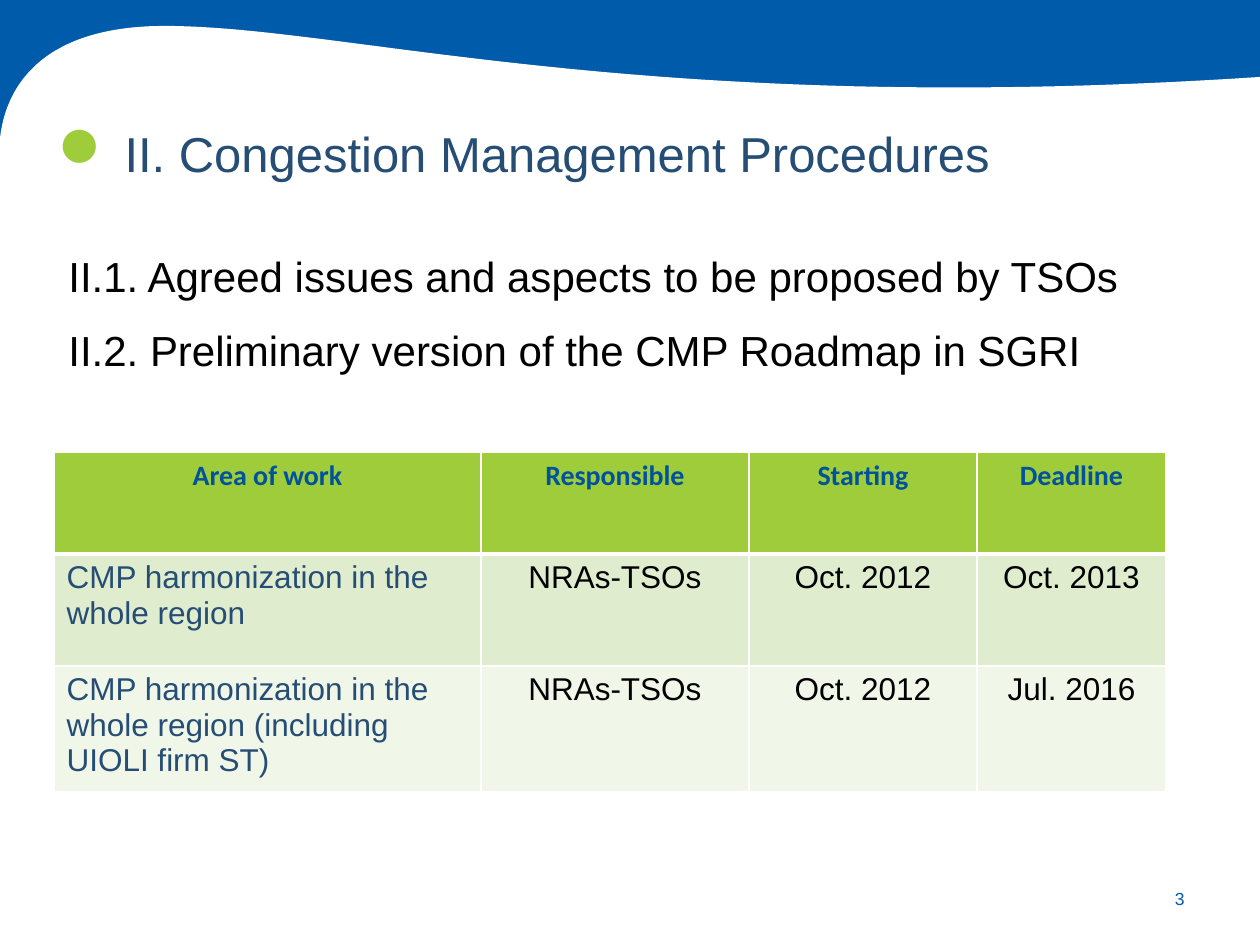
"""Build the slide on congestion management procedures."""
from lxml.etree import SubElement
from pptx import Presentation
from pptx.dml.color import RGBColor
from pptx.enum.shapes import MSO_SHAPE
from pptx.enum.text import MSO_ANCHOR, PP_ALIGN
from pptx.oxml.ns import qn
from pptx.util import Pt

PX = 914400 / 126
BLUE = RGBColor(0x00, 0x5B, 0xAB)
NAVY = RGBColor(0x00, 0x52, 0x9B)
STEEL = RGBColor(0x26, 0x4D, 0x74)
GREEN = RGBColor(0x9E, 0xCC, 0x3B)
LIGHT = RGBColor(0xDF, 0xEC, 0xCE)
PALE = RGBColor(0xF0, 0xF6, 0xE8)
BLACK = RGBColor(0, 0, 0)
WHITE = RGBColor(0xFF, 0xFF, 0xFF)

ROWS = [
    ["Area of work", "Responsible", "Starting", "Deadline"],
    ["CMP harmonization in the whole region", "NRAs-TSOs", "Oct. 2012", "Oct. 2013"],
    ["CMP harmonization in the whole region (including UIOLI firm ST)",
     "NRAs-TSOs", "Oct. 2012", "Jul. 2016"],
]
WIDTHS = [427, 268, 228, 189]
HEIGHTS = [102, 112, 125]
FILLS = [GREEN, LIGHT, PALE]


def emu(px):
    """Turn px into EMU."""
    return round(px * PX)


def paint(shape, color):
    """Give a shape a plain fill without line or shadow."""
    shape.shadow.inherit = False
    shape.fill.solid()
    shape.fill.fore_color.rgb = color
    shape.line.fill.background()


def style(par, size, color, align, face="Arial", bold=False):
    """Format a paragraph and its runs."""
    par.alignment = align
    for run in par.runs:
        font = run.font
        font.size, font.name, font.bold = Pt(size), face, bold
        font.color.rgb = color


def curve(start, ctrl1, ctrl2, end, steps=60):
    """Return points along a cubic curve, without its start."""
    points = []
    for step in range(1, steps + 1):
        t = step / steps
        u = 1 - t
        weights = (u ** 3, 3 * u * u * t, 3 * u * t * t, t ** 3)
        ends = zip(start, ctrl1, ctrl2, end)
        points.append(tuple(sum(w * v for w, v in zip(weights, axis)) for axis in ends))
    return points


def add_wave(slide):
    """Add the blue band and the white page that curves over it."""
    band = slide.shapes.add_shape(MSO_SHAPE.RECTANGLE, 0, 0, emu(1260), emu(145))
    paint(band, BLUE)
    crest = (165, 26)
    points = curve((1260, 77), (643, 118), (348, 26), crest)
    points += curve(crest, (29, 26), (4, 100), (0, 139))
    points += [(0, 945), (1260, 945)]
    pen = slide.shapes.build_freeform(emu(1260), emu(77), scale=1.0)
    pen.add_line_segments([(emu(x), emu(y)) for x, y in points], close=True)
    paint(pen.convert_to_shape(), WHITE)


def add_text(slide, box, lines, size, color, align=PP_ALIGN.LEFT,
             anchor=MSO_ANCHOR.TOP, indent=None, space=None):
    """Add a text box with one paragraph for each line."""
    frame = slide.shapes.add_textbox(*map(emu, box)).text_frame
    frame.word_wrap = True
    frame.vertical_anchor = anchor
    frame.text = "\n".join(lines)
    for index, par in enumerate(frame.paragraphs):
        style(par, size, color, align)
        if indent:
            props = par._p.get_or_add_pPr()
            props.set("marL", str(emu(indent[0])))
            props.set("indent", str(emu(indent[1])))
        if space:
            par.line_spacing = space
            par.space_after = Pt(2)
            par.space_before = Pt(6 if index else 0)


def add_edge(cell, side, width):
    """Add a white border to one side of a cell."""
    props = cell._tc.get_or_add_tcPr()
    line = SubElement(props, qn(f"a:ln{side}"), w=str(Pt(width)))
    fill = SubElement(line, qn("a:solidFill"))
    SubElement(fill, qn("a:srgbClr"), val=str(WHITE))


def fill_cell(cell, text, row, col):
    """Set the text, borders and fill of a cell."""
    cell.text = text
    par = cell.text_frame.paragraphs[0]
    if row == 0:
        style(par, 16, NAVY, PP_ALIGN.CENTER, "Calibri", True)
    elif col == 0:
        style(par, 18, STEEL, PP_ALIGN.LEFT)
    else:
        style(par, 18, BLACK, PP_ALIGN.CENTER)
    for side in "LRTB":
        thick = (row, side) in ((0, "B"), (1, "T"))
        add_edge(cell, side, 3 if thick else 1)
    cell.fill.solid()
    cell.fill.fore_color.rgb = FILLS[row]


def add_grid(slide, left, top):
    """Add the roadmap table."""
    size = emu(sum(WIDTHS)), emu(sum(HEIGHTS))
    table = slide.shapes.add_table(
        len(ROWS), len(WIDTHS), emu(left), emu(top), *size).table
    table.horz_banding = False
    for col, width in zip(table.columns, WIDTHS):
        col.width = emu(width)
    for row, height in zip(table.rows, HEIGHTS):
        row.height = emu(height)
    for row, texts in enumerate(ROWS):
        for col, text in enumerate(texts):
            fill_cell(table.cell(row, col), text, row, col)


def main():
    """Build and save the slide."""
    deck = Presentation()
    deck.slide_width, deck.slide_height = emu(1260), emu(945)
    slide = deck.slides.add_slide(deck.slide_layouts[6])
    add_wave(slide)
    add_text(slide, (1126, 874, 71, 50), ["3"], 10, BLUE,
             PP_ALIGN.RIGHT, MSO_ANCHOR.MIDDLE)
    add_text(slide, (44, 72, 69, 118), ["●"], 44, GREEN,
             PP_ALIGN.CENTER, MSO_ANCHOR.BOTTOM, (49, -49))
    add_text(slide, (0, 106, 1102, 84), ["II. Congestion Management Procedures"],
             28, STEEL, PP_ALIGN.CENTER, indent=(49, -37), space=1.2)
    add_text(slide, (44, 234, 1201, 149),
             ["II.1. Agreed issues and aspects to be proposed by TSOs",
              "II.2. Preliminary version of the CMP Roadmap in SGRI"],
             24, BLACK, indent=(49, -37), space=1.2)
    add_grid(slide, 54, 452)
    deck.save("out.pptx")


if __name__ == "__main__":
    main()
